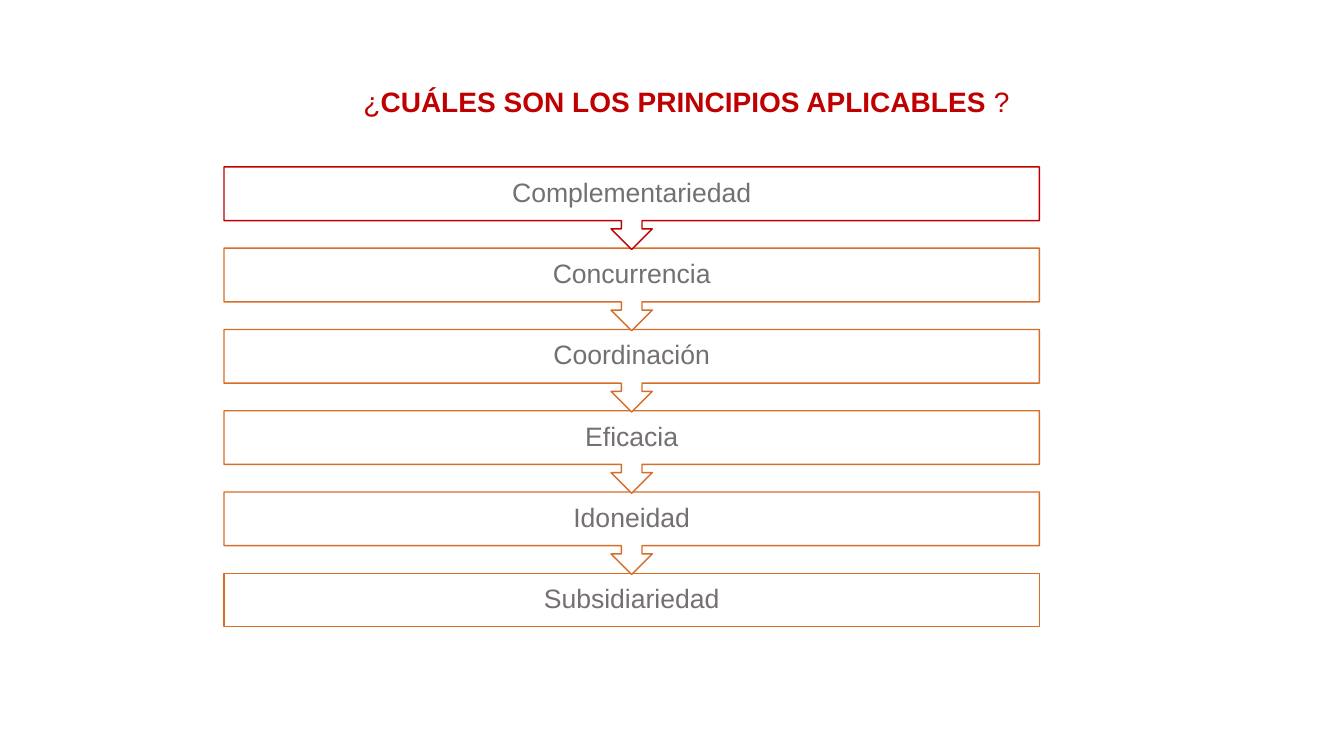
from pptx import Presentation
from pptx import util as u
from pptx.dml.color import RGBColor
from pptx.enum import shapes, text

WHITE = RGBColor(0xFF, 0xFF, 0xFF)
RED = RGBColor(0xC0, 0x00, 0x00)
ORANGE = RGBColor(0xD6, 0x6E, 0x29)
GREY = RGBColor(0x75, 0x70, 0x70)

GRID = 12  # columns and rows on the slide
PRINCIPLES = ["Complementariedad", "Concurrencia", "Coordinación",
              "Eficacia", "Idoneidad", "Subsidiariedad"]
LEFT, TOP, WIDTH = 2, 2.65, 7.28
PITCH, BOX_HEIGHT, CALLOUT_HEIGHT = 1.29, 0.85, 1.31


def write(frame, *runs, size, color, spacing, inset=0, indent=0, font="Arial"):
    """Fill a frame with one centred paragraph of (words, bold) runs."""
    frame.word_wrap = True
    frame.vertical_anchor = text.MSO_ANCHOR.MIDDLE
    frame.margin_left = frame.margin_right = u.Inches(inset)
    frame.margin_top = frame.margin_bottom = u.Inches(inset)
    paragraph = frame.paragraphs[0]
    paragraph.alignment = text.PP_ALIGN.CENTER
    paragraph.line_spacing = spacing
    if indent:
        paragraph._p.get_or_add_pPr().set("indent", str(u.Inches(indent)))
    for words, bold in runs:
        run = paragraph.add_run()
        run.text = words
        run.font.name = font
        run.font.size = u.Pt(size)
        run.font.bold = bold
        run.font.color.rgb = color


class PrinciplesSlide:
    def __init__(self, deck):
        self.slide = deck.slides.add_slide(deck.slide_layouts[6])
        self.column = deck.slide_width / GRID
        self.row = deck.slide_height / GRID

    def place(self, left, top, width, height):
        """Turn grid columns and rows into slide lengths."""
        return (round(left * self.column), round(top * self.row),
                round(width * self.column), round(height * self.row))

    def title(self, *runs):
        heading = self.slide.shapes.add_textbox(*self.place(2.68, 1.15, 6.6, 0.88))
        write(heading.text_frame, *runs, size=20, color=RED, spacing=1.07, indent=0.33)

    def principle(self, words, top, outline, leads_on):
        """Draw a box, with an arrow below it when another principle follows."""
        kind = shapes.MSO_SHAPE.RECTANGLE
        height = BOX_HEIGHT
        if leads_on:
            kind = shapes.MSO_SHAPE.DOWN_ARROW_CALLOUT
            height = CALLOUT_HEIGHT
        box = self.slide.shapes.add_shape(kind, *self.place(LEFT, top, WIDTH, height))
        if leads_on:
            for index, share in enumerate((0.25, 0.25, 0.25, 0.65)):
                box.adjustments[index] = share
        box.shadow.inherit = False
        box.fill.solid()
        box.fill.fore_color.rgb = WHITE
        box.line.color.rgb = outline
        box.line.width = u.Pt(1)
        write(box.text_frame, (words, False), size=19, color=GREY, spacing=0.9, inset=0.15)


def main():
    deck = Presentation()
    deck.slide_width, deck.slide_height = u.Inches(13.33), u.Inches(7.5)
    page = PrinciplesSlide(deck)
    page.title(("¿", False), ("CUÁLES SON LOS PRINCIPIOS APLICABLES ", True), ("?", False))
    # Bottom first, so that each arrow tip lies over the box below it
    for step, words in reversed(list(enumerate(PRINCIPLES))):
        page.principle(words, TOP + step * PITCH,
                       outline=ORANGE if step else RED,
                       leads_on=step < len(PRINCIPLES) - 1)
    deck.save("out.pptx")


if __name__ == "__main__":
    main()
